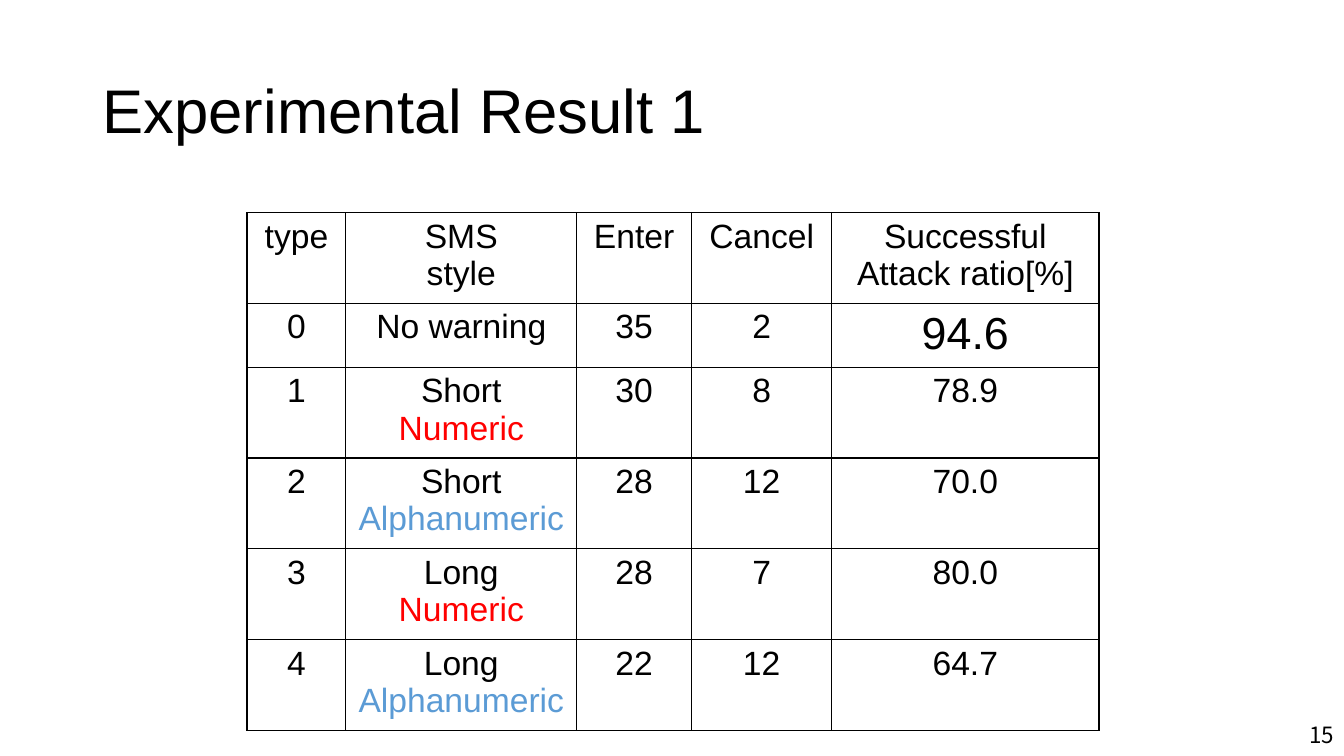
from lxml.etree import SubElement
from pptx import Presentation
from pptx.dml.color import RGBColor
from pptx.enum.text import MSO_ANCHOR, PP_ALIGN
from pptx.oxml.ns import qn
from pptx.util import Inches, Pt

COLORS = {"ink": "000000", "paper": "FFFFFF", "red": "FF0000", "blue": "5B9BD5"}
TINTS = {"Numeric": "red", "Alphanumeric": "blue"}

deck = Presentation()
deck.slide_width, deck.slide_height = Inches(13.33), Inches(7.5)
slide = deck.slides.add_slide(deck.slide_layouts[6])


def add_run(para, text, size, face="Arial", color="ink"):
    run = para.add_run()
    run.text = text
    run.font.size = Pt(size)
    run.font.name = face
    run.font.color.rgb = RGBColor.from_string(COLORS[color])


def add_label(box, text, size, face, align):
    frame = slide.shapes.add_textbox(*[Inches(n) for n in box]).text_frame
    frame.word_wrap = True
    frame.vertical_anchor = MSO_ANCHOR.MIDDLE
    para = frame.paragraphs[0]
    para.alignment = align
    add_run(para, text, size, face)
    return para


# Title
title = add_label((0.92, 0.4, 11.5, 1.45), "Experimental Result 1", 44, "Arial", PP_ALIGN.LEFT)
title.line_spacing = 0.9

# Results: each cell is a list of lines
rows = [
    [["type"], ["SMS", "style"], ["Enter"], ["Cancel"], ["Successful", "Attack ratio[%]"]],
    [["0"], ["No warning"], ["35"], ["2"], ["94.6"]],
    [["1"], ["Short", "Numeric"], ["30"], ["8"], ["78.9"]],
    [["2"], ["Short", "Alphanumeric"], ["28"], ["12"], ["70.0"]],
    [["3"], ["Long", "Numeric"], ["28"], ["7"], ["80.0"]],
    [["4"], ["Long", "Alphanumeric"], ["22"], ["12"], ["64.7"]],
]
widths = [0.98, 2.29, 1.14, 1.39, 2.65]
heights = [0.6 if len(row[1]) == 1 else 0.84 for row in rows]

table = slide.shapes.add_table(
    len(rows), len(widths), Inches(2.45), Inches(2.11),
    Inches(sum(widths)), Inches(sum(heights))).table
table.first_row = table.horz_banding = False
for col, width in zip(table.columns, widths):
    col.width = Inches(width)

for r, row in enumerate(rows):
    table.rows[r].height = Inches(heights[r])
    for c, lines in enumerate(row):
        cell = table.cell(r, c)

        # Cell text
        for i, line in enumerate(lines):
            frame = cell.text_frame
            para = frame.add_paragraph() if i else frame.paragraphs[0]
            para.alignment = PP_ALIGN.CENTER
            size = 32 if line == "94.6" else 24
            add_run(para, line, size, color=TINTS.get(line, "ink"))

        # Cell borders come before the fill in the XML
        props = cell._tc.get_or_add_tcPr()
        for side in ("lnL", "lnR", "lnT", "lnB"):
            edge = SubElement(props, qn("a:" + side), w=str(Pt(1)))
            paint = SubElement(edge, qn("a:solidFill"))
            SubElement(paint, qn("a:srgbClr"), val=COLORS["ink"])
        cell.fill.solid()
        cell.fill.fore_color.rgb = RGBColor.from_string(COLORS["paper"])

# Page number
add_label((10.33, 7.09, 3, 0.4), "15", 16, "Noto Sans CJK JP", PP_ALIGN.RIGHT)

deck.save("out.pptx")
